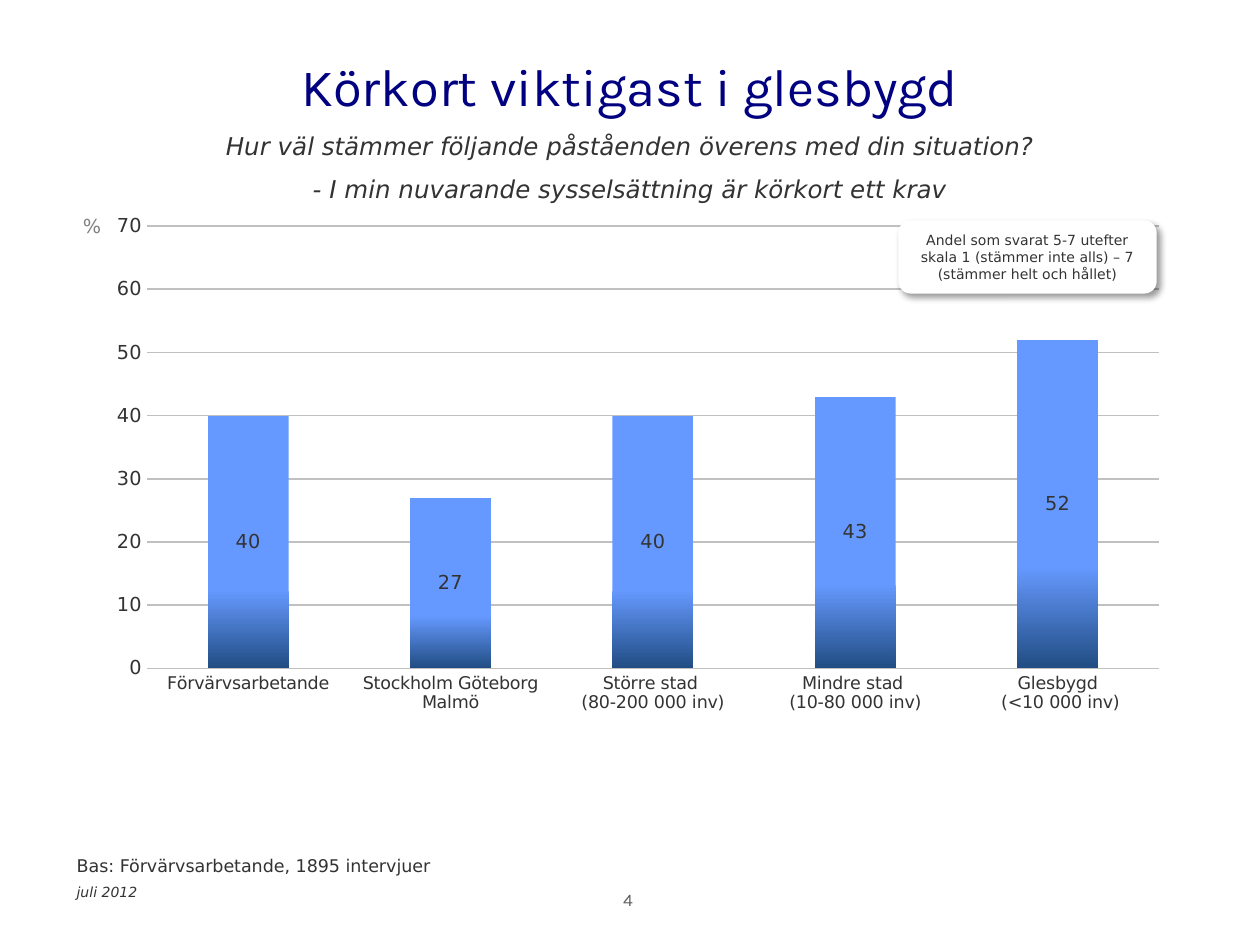
from pptx import Presentation, oxml, util as u
from pptx.chart.data import CategoryChartData
from pptx.dml.color import RGBColor
from pptx.enum import chart as ch, shapes, text
from pptx.oxml import ns

BODY, HEAD = "DejaVu Sans", "Karla"
NAVY, INK, GREY, PAGE_GREY = "000080", "333333", "808080", "5F5F5F"
GRID, BAR_LIGHT, BAR_DARK, WHITE = "C0C0C0", "6699FF", "214D83", "FFFFFF"


def colour(hex_value):
    return RGBColor.from_string(hex_value)


class SurveySlide:
    """Places elements by percentage of the slide's width and height."""

    def __init__(self, prs):
        self.width, self.height = prs.slide_width, prs.slide_height
        self.shapes = prs.slides.add_slide(prs.slide_layouts[6]).shapes

    def area(self, left, top, width, height):
        return (int(self.width * left / 100), int(self.height * top / 100),
                int(self.width * width / 100), int(self.height * height / 100))

    def style(self, font, size, hex_value=INK, name=BODY, italic=False):
        values = {"size": u.Pt(size), "name": name, "italic": italic}
        for key, value in values.items():
            setattr(font, key, value)
        font.color.rgb = colour(hex_value)

    def set_lines(self, shape, lines, size, align=None, anchor=text.MSO_ANCHOR.TOP, **look):
        frame = shape.text_frame
        frame.word_wrap = True
        frame.vertical_anchor = anchor
        frame.text = "\n".join(lines)
        for index, paragraph in enumerate(frame.paragraphs):
            paragraph.alignment = align
            paragraph.space_before = u.Pt(8 if index else 0)
            self.style(paragraph.runs[0].font, size, **look)

    def label(self, area, lines, size, **look):
        self.set_lines(self.shapes.add_textbox(*self.area(*area)), lines, size, **look)

    def callout(self, area, lines, size, **look):
        box = self.shapes.add_shape(
            shapes.MSO_SHAPE.ROUNDED_RECTANGLE, *self.area(*area))
        box.fill.solid()
        box.fill.fore_color.rgb = colour(WHITE)
        box.line.fill.background()
        box.text_frame.margin_top = box.text_frame.margin_bottom = u.Inches(0.06)
        box.shadow.inherit = False
        # Soft shadow: 4 pt blur, 3 pt away, 45 degrees
        effects = box.element.spPr.find(ns.qn("a:effectLst"))
        effects.append(oxml.parse_xml(
            f'<a:outerShdw {ns.nsdecls("a")} blurRad="{u.Pt(4)}" dist="{u.Pt(3)}" '
            'dir="2700000" algn="tl" rotWithShape="0"><a:srgbClr val="000000">'
            '<a:alpha val="40000"/></a:srgbClr></a:outerShdw>'))
        self.set_lines(box, lines, size, **look)

    def columns(self, area, shares, plot_area):
        data = CategoryChartData(number_format="0")
        data.categories = list(shares)
        data.add_series("Series 1", shares.values())
        chart = self.shapes.add_chart(
            ch.XL_CHART_TYPE.COLUMN_CLUSTERED, *self.area(*area), data).chart
        chart.has_title = chart.has_legend = False
        self.style(chart.font, 8.8, "000000", "Arial")

        # Axes
        for axis, size in ((chart.category_axis, 10), (chart.value_axis, 11)):
            axis.major_tick_mark = axis.minor_tick_mark = ch.XL_TICK_MARK.NONE
            axis.format.line.fill.background()
            self.style(axis.tick_labels.font, size)
        scale = {"minimum_scale": 0, "maximum_scale": 70, "major_unit": 10,
                 "has_major_gridlines": True}
        for key, value in scale.items():
            setattr(chart.value_axis, key, value)
        gridline = chart.value_axis.major_gridlines.format.line
        gridline.color.rgb = colour(GRID)
        gridline.width = u.Pt(0.88)

        # Columns: light at the top, dark at the foot
        plot = chart.plots[0]
        plot.vary_by_categories = False
        plot.gap_width = 150
        fill = plot.series[0].format.fill
        fill.gradient()
        fill.gradient_angle = 270
        for stop, position, shade in zip(
                fill.gradient_stops, (0.69, 1), (BAR_LIGHT, BAR_DARK)):
            stop.position = position
            stop.color.rgb = colour(shade)

        # Values inside the columns
        plot.has_data_labels = True
        formats = {"show_value": True, "number_format": "0",
                   "number_format_is_linked": False,
                   "position": ch.XL_LABEL_POSITION.CENTER}
        for key, value in formats.items():
            setattr(plot.data_labels, key, value)
        self.style(plot.data_labels.font, 11)

        # Fixed inner plot area
        plot_xml = chart.element.find(".//" + ns.qn("c:plotArea"))
        for old in plot_xml.findall(ns.qn("c:layout")):
            plot_xml.remove(old)
        modes = '<c:xMode val="edge"/><c:yMode val="edge"/>'
        sizes = "".join(f'<c:{key} val="{value}"/>' for key, value in zip("xywh", plot_area))
        plot_xml.insert(0, oxml.parse_xml(
            f'<c:layout {ns.nsdecls("c")}><c:manualLayout>'
            f'<c:layoutTarget val="inner"/>{modes}{sizes}</c:manualLayout></c:layout>'))


def main():
    prs = Presentation()
    prs.slide_width, prs.slide_height = u.Inches(10), u.Inches(7.5)
    slide = SurveySlide(prs)
    centre, middle = text.PP_ALIGN.CENTER, text.MSO_ANCHOR.MIDDLE

    # Heading and survey question
    slide.label((0, 0.67, 100, 16.67), ["Körkort viktigast i glesbygd"], 30,
                align=centre, anchor=middle, hex_value=NAVY, name=HEAD)
    slide.label((5.1, 13.2, 89.8, 9.2),
                ["Hur väl stämmer följande påståenden överens med din situation?",
                 "- I min nuvarande sysselsättning är körkort ett krav"],
                14, align=centre, italic=True)

    # Share who need a licence, by type of place
    licence_shares = {
        "Förvärvsarbetande": 40,
        "Stockholm Göteborg Malmö": 27,
        "Större stad \n(80-200 000 inv)": 40,
        "Mindre stad \n(10-80 000 inv)": 43,
        "Glesbygd\n (<10 000 inv)": 52,
    }
    slide.columns((5.9, 22.67, 87.3, 65.2), licence_shares, (0.066, 0.019, 0.92, 0.718))
    slide.label((5.6, 22, 3.9, 3.87), ["%"], 11, hex_value=GREY)
    slide.callout((71.3, 23.33, 20.5, 7.73),
                  ["Andel som svarat 5-7 utefter skala 1 (stämmer inte alls) – 7 "
                   "(stämmer helt och hållet)"], 8, align=centre, anchor=middle)

    # Footer
    slide.label((5.1, 89.87, 44.9, 3.6), ["Bas: Förvärvsarbetande, 1895 intervjuer"], 10)
    slide.label((5.1, 92.8, 31.7, 3.07), ["juli 2012"], 8, italic=True)
    slide.label((38.2, 93.47, 23.3, 6.5), ["4"], 10,
                align=centre, hex_value=PAGE_GREY, name=HEAD)

    prs.save("out.pptx")


if __name__ == "__main__":
    main()
